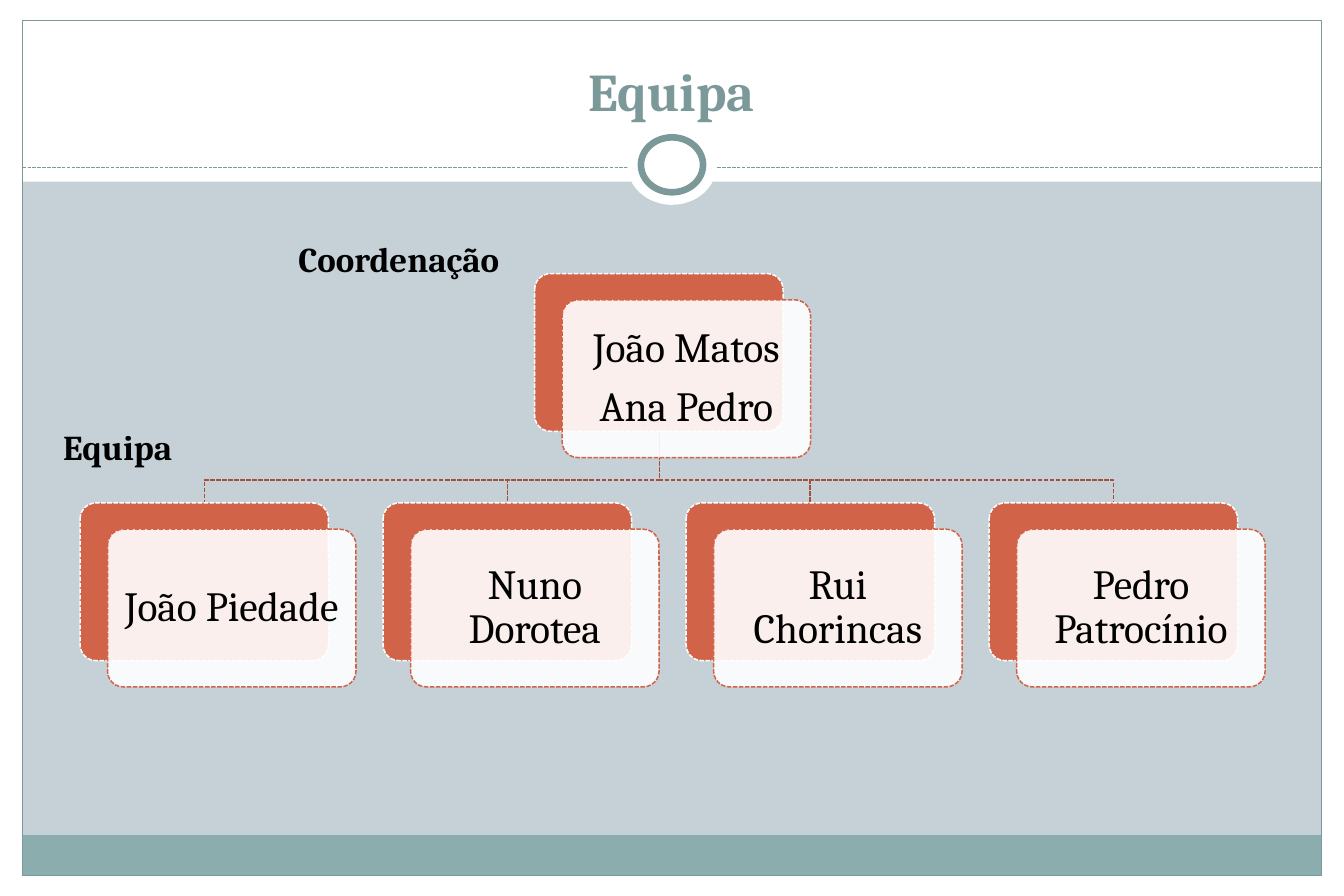
from lxml import etree
from pptx import Presentation
from pptx.dml.color import RGBColor
from pptx.enum.dml import MSO_LINE
from pptx.enum.shapes import MSO_CONNECTOR, MSO_SHAPE
from pptx.enum.text import MSO_ANCHOR, PP_ALIGN
from pptx.oxml.ns import qn
from pptx.util import Emu, Pt

RECTANGLE, ROUNDED, OVAL = MSO_SHAPE.RECTANGLE, MSO_SHAPE.ROUNDED_RECTANGLE, MSO_SHAPE.OVAL
STRAIGHT = MSO_CONNECTOR.STRAIGHT
DASHED = MSO_LINE.SQUARE_DOT  # written to the file as sysDash
CENTER, LEFT = PP_ALIGN.CENTER, PP_ALIGN.LEFT
TOP, MIDDLE, BOTTOM = MSO_ANCHOR.TOP, MSO_ANCHOR.MIDDLE, MSO_ANCHOR.BOTTOM

EMU_PER_PX = 9144  # 100 px to the inch
WIDTH, HEIGHT = 1125, 750
FONT = "Cambria"
COLORS = {
    "background": "C5D1D7",
    "white": "FFFFFF",
    "black": "000000",
    "footer": "8CADAE",
    "teal": "7C999A",
    "orange": "D16349",
    "branch": "A74F3A",
}

CARD_WIDTH, CARD_HEIGHT = 208, 132
CARD_OFFSET_X, CARD_OFFSET_Y = 23, 22
COORDINATORS = ["João Matos", "Ana Pedro"]
MEMBERS = ["João Piedade", "Nuno Dorotea", "Rui Chorincas", "Pedro Patrocínio"]


def px(length):
    return Emu(round(length * EMU_PER_PX))


def rgb(name):
    return RGBColor.from_string(COLORS[name])


def style_line(line, color, width, dashed=False):
    line.color.rgb = rgb(color)
    line.width = Pt(width)
    if dashed:
        line.dash_style = DASHED


def add_shape(slide, kind, box, fill=None, line=None, width=0.75, dashed=False):
    shape = slide.shapes.add_shape(kind, *map(px, box))
    shape.shadow.inherit = False
    if fill:
        shape.fill.solid()
        shape.fill.fore_color.rgb = rgb(fill)
    else:
        shape.fill.background()
    if line:
        style_line(shape.line, line, width, dashed)
    else:
        shape.line.fill.background()
    return shape


def set_opacity(shape, percent):
    color = shape.fill._xPr.find(qn("a:solidFill"))[0]
    etree.SubElement(color, qn("a:alpha")).set("val", str(percent * 1000))


def write(shape, lines, size, color, bold=False, align=LEFT, anchor=TOP, insets=(10, 5)):
    """Fill a shape with one paragraph per line and return the paragraphs."""
    frame = shape.text_frame
    frame.word_wrap = True
    frame.vertical_anchor = anchor
    frame.margin_left = frame.margin_right = px(insets[0])
    frame.margin_top = frame.margin_bottom = px(insets[1])
    for index, line in enumerate(lines):
        paragraph = frame.add_paragraph() if index else frame.paragraphs[0]
        paragraph.alignment = align
        run = paragraph.add_run()
        run.text = line
        run.font.name = FONT
        run.font.size = Pt(size)
        run.font.bold = bold
        run.font.color.rgb = rgb(color)
    return frame.paragraphs


def add_label(slide, box, text, size, color, **options):
    label = slide.shapes.add_textbox(*map(px, box))
    write(label, [text], size, color, bold=True, **options)


def add_frame(slide, box):
    """Draw the white margins, the footer band and the outline."""
    left, top, width, height = box
    side, header, bottom, band = 19, 152, 17, 34
    inner = width - 2 * side
    footer_bottom = top + height - bottom
    margins = [
        (left, footer_bottom, width, bottom),
        (left, top, width, header),
        (left, top, side, height),
        (left + width - side, top, side, height),
    ]
    for margin in margins:
        add_shape(slide, RECTANGLE, margin, "white")
    add_shape(slide, RECTANGLE, (left + side, footer_bottom - band, inner, band), "footer")
    outline = (left + side, top + bottom, inner, height - 2 * bottom)
    add_shape(slide, RECTANGLE, outline, line="teal")


def add_header(slide, box):
    """Draw the dashed rule with its ring, and the title above."""
    left, top, width, height = box
    rule_y = top + height - 12
    rule = slide.shapes.add_connector(
        STRAIGHT, px(left), px(rule_y), px(left + width), px(rule_y))
    style_line(rule.line, "teal", 0.75, dashed=True)
    etree.SubElement(rule._element.spPr, qn("a:effectLst"))
    center_x, center_y = left + width / 2, rule_y - 2
    for ring_width, ring_height, line in [(75, 67, None), (52, 46, "teal")]:
        ring = (center_x - ring_width / 2, center_y - ring_height / 2, ring_width, ring_height)
        add_shape(slide, OVAL, ring, "white", line, 4)
    add_label(slide, (left + 18, top + 25, width - 37, 83), "Equipa", 32, "teal",
              align=CENTER, anchor=BOTTOM, insets=(11, 6))


def add_card(slide, left, top, names):
    """Draw an orange card with a translucent name card in front."""
    back = add_shape(slide, ROUNDED, (left, top, CARD_WIDTH, CARD_HEIGHT),
                     "orange", "white", 0.9, True)
    front_box = (left + CARD_OFFSET_X, top + CARD_OFFSET_Y, CARD_WIDTH, CARD_HEIGHT)
    front = add_shape(slide, ROUNDED, front_box, "white", "orange", 0.9, True)
    set_opacity(front, 90)
    for card in (back, front):
        card.adjustments[0] = 0.1
    for paragraph in write(front, names, 25, "black", align=CENTER, anchor=MIDDLE,
                           insets=(6, 6)):
        paragraph.line_spacing = 0.9
        paragraph.space_after = Pt(9)


def add_branch(slide, start, end):
    bend_y = end[1] - 19
    builder = slide.shapes.build_freeform(*start, scale=EMU_PER_PX)
    builder.add_line_segments([(start[0], bend_y), (end[0], bend_y), end], close=False)
    branch = builder.convert_to_shape()
    branch.shadow.inherit = False
    branch.fill.background()
    style_line(branch.line, "branch", 0.9, dashed=True)


def add_team_chart(slide, box):
    left, top, width, height = box
    card_span = CARD_WIDTH + CARD_OFFSET_X
    pitch = (width - card_span) / (len(MEMBERS) - 1)
    member_top = top + height - CARD_HEIGHT - CARD_OFFSET_Y
    root_left = left + (width - card_span) / 2
    root = (root_left + CARD_WIDTH / 2, top + CARD_HEIGHT)
    member_lefts = [left + index * pitch for index in range(len(MEMBERS))]

    for member_left in reversed(member_lefts):
        add_branch(slide, root, (member_left + CARD_WIDTH / 2, member_top))
    add_card(slide, root_left, top, COORDINATORS)
    for member_left, name in zip(member_lefts, MEMBERS):
        add_card(slide, member_left, member_top, [name])
    add_label(slide, (left + 173, top - 35, 220, 45), "Coordenação", 21, "black")
    add_label(slide, (left - 24, member_top - 70, 128, 45), "Equipa", 21, "black")


def main():
    presentation = Presentation()
    presentation.slide_width, presentation.slide_height = px(WIDTH), px(HEIGHT)
    blank_layout = presentation.slide_layouts[6]
    slide = presentation.slides.add_slide(blank_layout)
    slide.background.fill.solid()
    slide.background.fill.fore_color.rgb = rgb("background")
    add_frame(slide, (0, 0, WIDTH, HEIGHT))
    add_header(slide, (19, 0, WIDTH - 38, 152))
    add_team_chart(slide, (67, 229, 992, 346))
    presentation.save("out.pptx")


if __name__ == "__main__":
    main()
